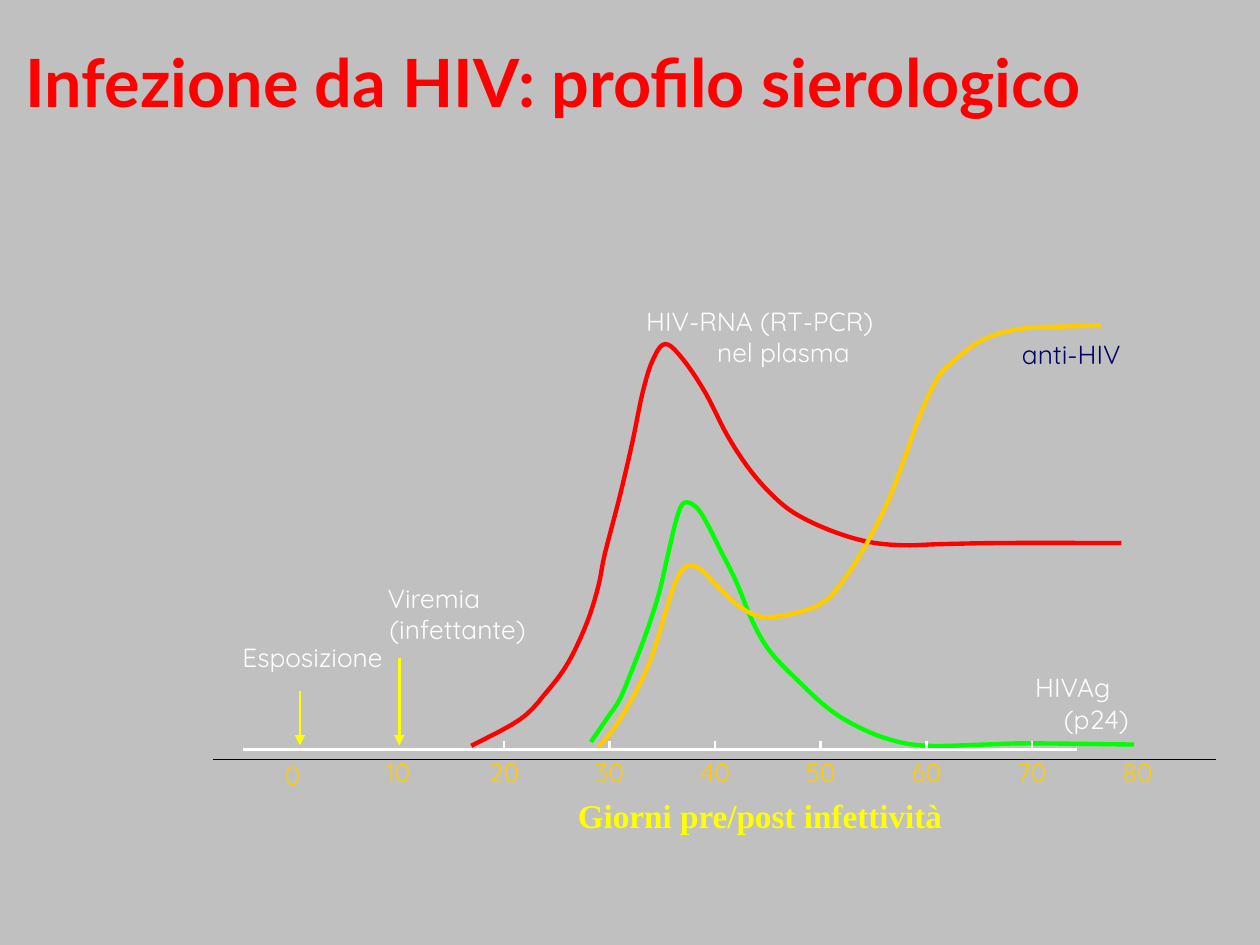
from lxml import etree
from pptx import Presentation
from pptx.dml.color import RGBColor
from pptx.enum import shapes, text
from pptx.oxml import ns
from pptx.util import Pt

COLORS = {"grey": "C0C0C0", "red": "FF0000", "green": "00FF00", "gold": "FFCC00",
          "yellow": "FFFF00", "white": "FFFFFF", "navy": "000066", "black": "000000"}

# Key points of each curve, in points from the corner of the plot
CURVES = {
    "red": [(149.3, 246.2), (177.4, 231), (192.5, 215.3), (204.7, 198.7), (215.5, 175.7),
            (222, 154.8), (225.6, 136.8), (234.2, 103.7), (241.4, 72.7), (247.2, 44.6),
            (253, 25.9), (260.2, 16.6), (270.2, 25.2), (283.2, 44.6), (295.4, 68.4),
            (307, 86.4), (319.2, 100.8), (333.6, 113), (354.5, 123.1), (376, 129.6),
            (396.2, 131.6), (416.4, 131), (453, 130.3), (520.8, 130.3)],
    "green": [(217.7, 244), (227, 230.4), (234.2, 219.6), (241.4, 202.3), (249.4, 181.4),
              (256.6, 159), (261.6, 137.5), (266.6, 116.6), (271, 107.3), (278.2, 110.2),
              (284.6, 120.2), (291.8, 134.6), (300.5, 152), (310.6, 176.4), (320.6, 193),
              (336.5, 209.5), (353, 224.6), (369, 234.7), (388.3, 242.6), (409.2, 246.2),
              (443, 245.5), (467.5, 244.8), (528, 245.5)],
    "gold": [(222, 247), (231.4, 235.4), (242.2, 217.4), (252.2, 195.8), (261.6, 165.6),
             (266.6, 151.2), (272.4, 143.6), (280.3, 145.4), (290.4, 155.5), (301.2, 165.6),
             (311.3, 171.4), (320, 172.6), (333.6, 170.6), (349.4, 164.9), (360.2, 154),
             (372.5, 135.4), (386.2, 109.4), (395.5, 85.7), (405.6, 57.6), (415, 37.4),
             (423.6, 27.4), (438.7, 15.8), (453, 10), (469.7, 7.2), (492.7, 6.5),
             (509.3, 5.8)],
}

# Text, left, top, width, height, colour
LABELS = [
    ("Esposizione", 13.2, 186.5, 90.7, 19, "white"),
    ("Viremia\v(infettante)", 70, 152.6, 116, 46, "white"),
    ("HIVAg\v(p24)", 451, 203.8, 84, 38, "white"),
    ("anti-HIV", 450.2, 13, 84, 38, "navy"),
    ("HIV-RNA (RT-PCR)\vnel plasma", 245.8, -5.8, 136.8, 68, "white"),
]


def color(name):
    return RGBColor.from_string(COLORS[name])


def format_text(tf, content, size, font, name, bold=False, align=text.PP_ALIGN.CENTER):
    tf.word_wrap = True
    tf.margin_left = tf.margin_top = tf.margin_right = tf.margin_bottom = 0
    tf.vertical_anchor = text.MSO_ANCHOR.TOP
    tf.text = content
    p = tf.paragraphs[0]
    p.alignment = align
    for r in p.runs:
        r.font.size, r.font.name, r.font.bold = Pt(size), font, bold
        r.font.color.rgb = color(name)
    return p


def add_label(s, content, x, y, w, h, name, size=15, font="Quicksand", bold=False, hanging=0):
    tf = s.shapes.add_textbox(Pt(x), Pt(y), Pt(w), Pt(h)).text_frame
    p = format_text(tf, content, size, font, name, bold)
    if hanging:
        pPr = p._p.get_or_add_pPr()
        pPr.set("marL", str(Pt(hanging)))
        pPr.set("indent", str(-Pt(hanging)))


def add_line(s, x1, y1, x2, y2, name, width=1.5, arrow=False):
    line = s.shapes.add_connector(shapes.MSO_CONNECTOR.STRAIGHT, Pt(x1), Pt(y1), Pt(x2), Pt(y2))
    line.line.color.rgb = color(name)
    line.line.width = Pt(width)
    if arrow:
        ln = line.line._get_or_add_ln()
        etree.SubElement(ln, ns.qn("a:tailEnd"), type="triangle")
    etree.SubElement(line._element.spPr, ns.qn("a:effectLst"))


def smooth(points, steps=5):
    """Catmull-Rom spline through the points."""
    padded = [points[0], *points, points[-1]]
    result = [points[0]]
    for a, b, c, d in zip(padded, padded[1:], padded[2:], padded[3:]):
        for i in range(1, steps + 1):
            t = i / steps
            result.append(tuple(
                (2 * q + (r - p) * t + (2 * p - 5 * q + 4 * r - v) * t ** 2
                 + (3 * q - p - 3 * r + v) * t ** 3) / 2
                for p, q, r, v in zip(a, b, c, d)))
    return result


def add_curve(s, left, top, points, name):
    path_points = [(Pt(left + x), Pt(top + y)) for x, y in smooth(points)]
    builder = s.shapes.build_freeform(*path_points[0])
    builder.add_line_segments(path_points[1:], close=False)
    sp = builder.convert_to_shape()
    sp.shadow.inherit = False
    sp.fill.background()
    sp.line.color.rgb = color(name)
    sp.line.width = Pt(2.5)


def add_title(s, x, y, w, h):
    sp = s.shapes.title
    sp.left, sp.top, sp.width, sp.height = Pt(x), Pt(y), Pt(w), Pt(h)
    tf = sp.text_frame
    format_text(tf, "Infezione da HIV: profilo sierologico", 38, "Lato", "red", True,
                text.PP_ALIGN.LEFT)
    tf.margin_left, tf.margin_top = Pt(14.5), Pt(3.6)


def add_axis(s, left, top, width):
    base, first, step = top + 248.4, left + 47.3, 60.34
    add_line(s, left + 19, base, left + 495.6, base, "white")
    add_line(s, left + 1.7, top + 254.2, left + width, top + 254.2, "black", 0.75)
    for i in range(9):
        x = first + i * step
        if 2 <= i <= 7:
            add_line(s, x, base, x, base - 5, "white")
        drop = 2 if i == 0 else 0
        add_label(s, str(i * 10), x - 17.3, top + 252 + drop, 34.6, 26, "gold")
    add_label(s, "Giorni pre/post infettività", left + 117, top + 274.3, 394.6, 33,
              "yellow", 19, "Times New Roman", True)


def add_plot(s, left, top, width):
    for name, points in CURVES.items():
        add_curve(s, left, top, points, name)
    add_axis(s, left, top, width)
    # Event arrows
    for x, y in ((108.2, 195.8), (51.4, 214.6)):
        add_line(s, left + x, top + y, left + x, top + 246, "yellow", arrow=True)
    # Curve and event labels
    for content, x, y, w, h, name in LABELS:
        add_label(s, content, left + x, top + y, w, h, name, hanging=27)


def main():
    prs = Presentation()
    prs.slide_width, prs.slide_height = Pt(720), Pt(540)
    s = prs.slides.add_slide(prs.slide_layouts[5])
    s.background.fill.solid()
    s.background.fill.fore_color.rgb = color("grey")
    add_title(s, 0, 20, 720, 52.6)
    add_plot(s, 120, 180, 574.8)
    prs.save("out.pptx")


if __name__ == "__main__":
    main()
